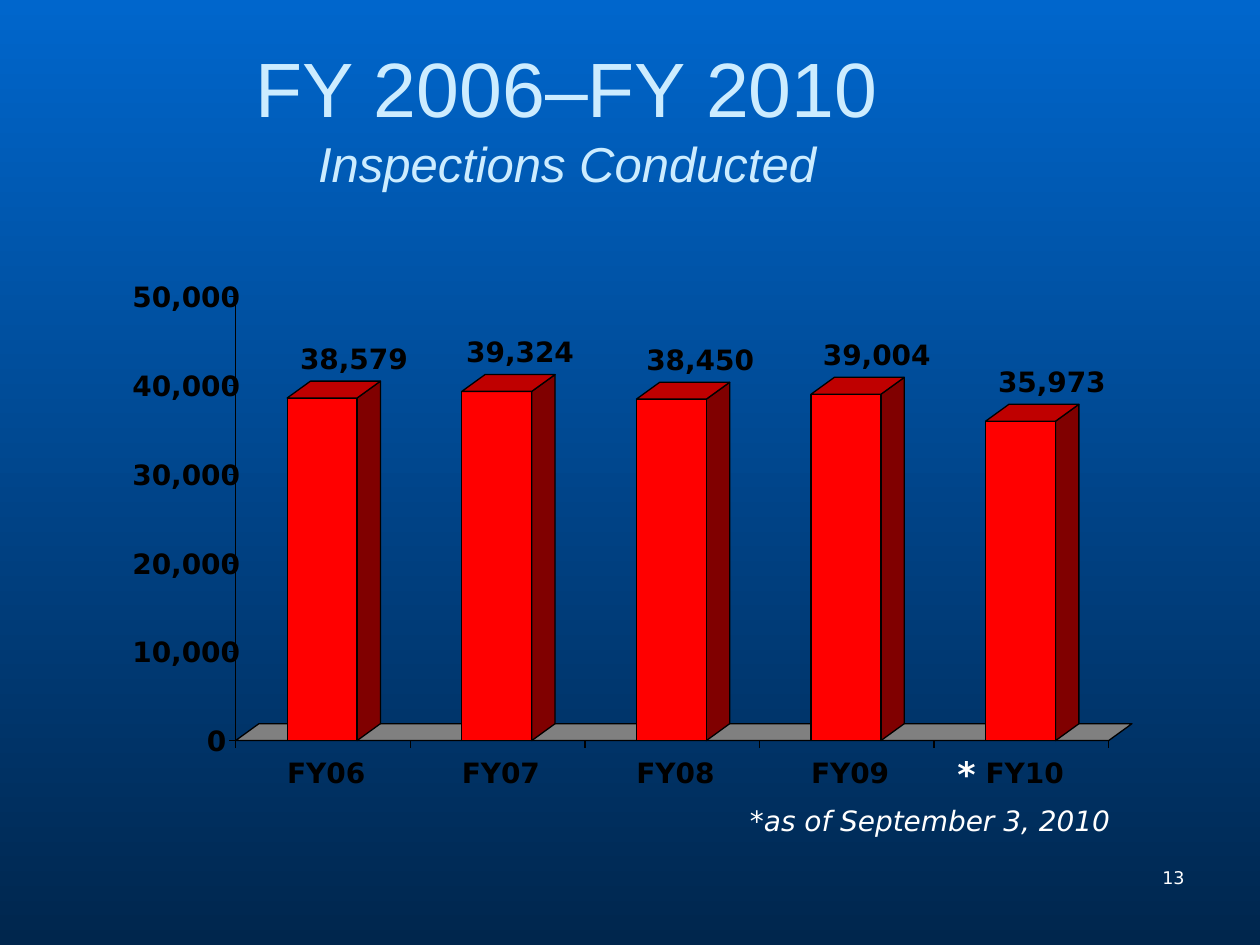
from lxml import etree
from pptx import Presentation
from pptx import util as u
from pptx.dml import color
from pptx.enum import shapes, text
from pptx.oxml import ns

BLACK, WHITE, ICE = "000000", "FFFFFF", "CCECFF"
FRONT, SIDE, TOP, FLOOR = "FF0000", "800000", "BF0000", "808080"
ORIGIN_X, ORIGIN_Y = 4.75, 14.93
STEP, BAR_OFFSET, BAR_WIDTH = 3.52, 1.04, 1.41
DEPTH_X, DEPTH_Y = 0.47, 0.34
CM_PER_10000 = 1.79
TICK = 0.14
INSPECTIONS = (
    ("FY06", 38579, 6.05),
    ("FY07", 39324, 9.4),
    ("FY08", 38450, 13.03),
    ("FY09", 39004, 16.59),
    ("FY10", 35973, 20.12),
)


def rgb(value):
    return color.RGBColor.from_string(value)


class SlideBuilder:
    body_font = "DejaVu Sans"
    title_font = "Arial"
    line_width = u.Pt(0.75)

    def __init__(self, slide):
        self.slide = slide

    def background(self, start, end):
        fill = self.slide.background.fill
        fill.gradient()
        fill.gradient_angle = 270
        for stop, value in zip(fill.gradient_stops, (start, end)):
            stop.color.rgb = rgb(value)

    def title(self, heading, subtitle, left, top, width, height):
        shape = self.slide.shapes.title
        shape.left, shape.top = u.Cm(left), u.Cm(top)
        shape.width, shape.height = u.Cm(width), u.Cm(height)
        frame = shape.text_frame
        frame.auto_size = text.MSO_AUTO_SIZE.NONE
        frame.vertical_anchor = text.MSO_ANCHOR.MIDDLE
        paragraph = frame.paragraphs[0]
        paragraph.alignment = text.PP_ALIGN.CENTER
        paragraph.font.name = self.title_font
        paragraph.font.color.rgb = rgb(ICE)
        run = paragraph.add_run()
        run.text = heading
        run.font.size = u.Pt(44)
        paragraph.add_line_break()
        run = paragraph.add_run()
        run.text = subtitle
        run.font.size = u.Pt(28)
        run.font.italic = True

    def text_box(self, words, left, top, width, height, size, value=WHITE,
                 bold=False, italic=False, align=text.PP_ALIGN.LEFT):
        shape = self.slide.shapes.add_textbox(
            u.Cm(left), u.Cm(top), u.Cm(width), u.Cm(height))
        frame = shape.text_frame
        frame.word_wrap = True
        paragraph = frame.paragraphs[0]
        paragraph.text = words
        paragraph.alignment = align
        font = paragraph.font
        font.name, font.size = self.body_font, u.Pt(size)
        font.bold, font.italic = bold, italic
        font.color.rgb = rgb(value)
        return frame

    def chart_label(self, words, left, top, width):
        frame = self.text_box(words, left, top, width, 0.84, 16, BLACK, bold=True)
        frame.word_wrap = False
        frame.margin_left = frame.margin_right = 0
        frame.margin_top = frame.margin_bottom = 0

    def paint(self, shape, value):
        shape.shadow.inherit = False
        shape.fill.solid()
        shape.fill.fore_color.rgb = rgb(value)
        shape.line.color.rgb = rgb(BLACK)
        shape.line.width = self.line_width

    def rectangle(self, left, top, width, height, value):
        shape = self.slide.shapes.add_shape(
            shapes.MSO_SHAPE.RECTANGLE,
            u.Cm(left), u.Cm(top), u.Cm(width), u.Cm(height))
        self.paint(shape, value)

    def polygon(self, points, value):
        start, *rest = [(u.Cm(x), u.Cm(y)) for x, y in points]
        builder = self.slide.shapes.build_freeform(*start)
        builder.add_line_segments(rest, close=True)
        self.paint(builder.convert_to_shape(), value)

    def slab(self, left, front, width, value):
        right, back = left + width, front - DEPTH_Y
        self.polygon([(left, front), (left + DEPTH_X, back),
                      (right + DEPTH_X, back), (right, front)], value)

    def bar(self, left, height):
        right, top = left + BAR_WIDTH, ORIGIN_Y - height
        self.polygon([(right, ORIGIN_Y), (right, top),
                      (right + DEPTH_X, top - DEPTH_Y),
                      (right + DEPTH_X, ORIGIN_Y - DEPTH_Y)], SIDE)
        self.rectangle(left, top, BAR_WIDTH, height, FRONT)
        self.slab(left, top, BAR_WIDTH, TOP)

    def line(self, x1, y1, x2, y2):
        connector = self.slide.shapes.add_connector(
            shapes.MSO_CONNECTOR.STRAIGHT,
            u.Cm(x1), u.Cm(y1), u.Cm(x2), u.Cm(y2))
        connector.line.color.rgb = rgb(BLACK)
        connector.line.width = self.line_width
        etree.SubElement(connector._element.spPr, ns.qn("a:effectLst"))


def main():
    presentation = Presentation()
    presentation.slide_width, presentation.slide_height = u.Cm(25.4), u.Cm(19.05)
    slide = presentation.slides.add_slide(presentation.slide_layouts[5])
    builder = SlideBuilder(slide)
    builder.background("0066CC", "00264D")
    builder.title("FY 2006–FY 2010", "Inspections Conducted", 0, 0.76, 22.86, 3.18)

    axis_width = STEP * len(INSPECTIONS)
    builder.slab(ORIGIN_X, ORIGIN_Y, axis_width, FLOOR)
    for index, (year, count, label_left) in enumerate(INSPECTIONS):
        left = ORIGIN_X + index * STEP + BAR_OFFSET
        height = count / 10000 * CM_PER_10000
        builder.bar(left, height)
        builder.chart_label(f"{count:,}", label_left, ORIGIN_Y - height - 1.14, 2.24)
        builder.chart_label(year, left, 15.24, 1.83)

    builder.line(ORIGIN_X, ORIGIN_Y, ORIGIN_X, ORIGIN_Y - 5 * CM_PER_10000)
    builder.line(ORIGIN_X, ORIGIN_Y, ORIGIN_X + axis_width, ORIGIN_Y)
    for index in range(6):
        x, y = ORIGIN_X + index * STEP, ORIGIN_Y - index * CM_PER_10000
        builder.line(x, ORIGIN_Y, x, ORIGIN_Y + TICK)
        builder.line(ORIGIN_X, y, ORIGIN_X - TICK, y)
        label_left, label_width = (2.67, 2.24) if index else (4.17, 0.66)
        builder.chart_label(f"{index * 10000:,}", label_left, y - 0.34, label_width)

    builder.text_box("*", 19.05, 15.04, 0.64, 1.09, 20, bold=True)
    builder.text_box("*as of September 3, 2010", 14.17, 16.08, 8.46, 0.94, 16,
                     italic=True, align=text.PP_ALIGN.RIGHT)
    builder.text_box("13", 18.21, 17.35, 5.92, 1.27, 10, align=text.PP_ALIGN.RIGHT)
    presentation.save("out.pptx")


if __name__ == "__main__":
    main()
